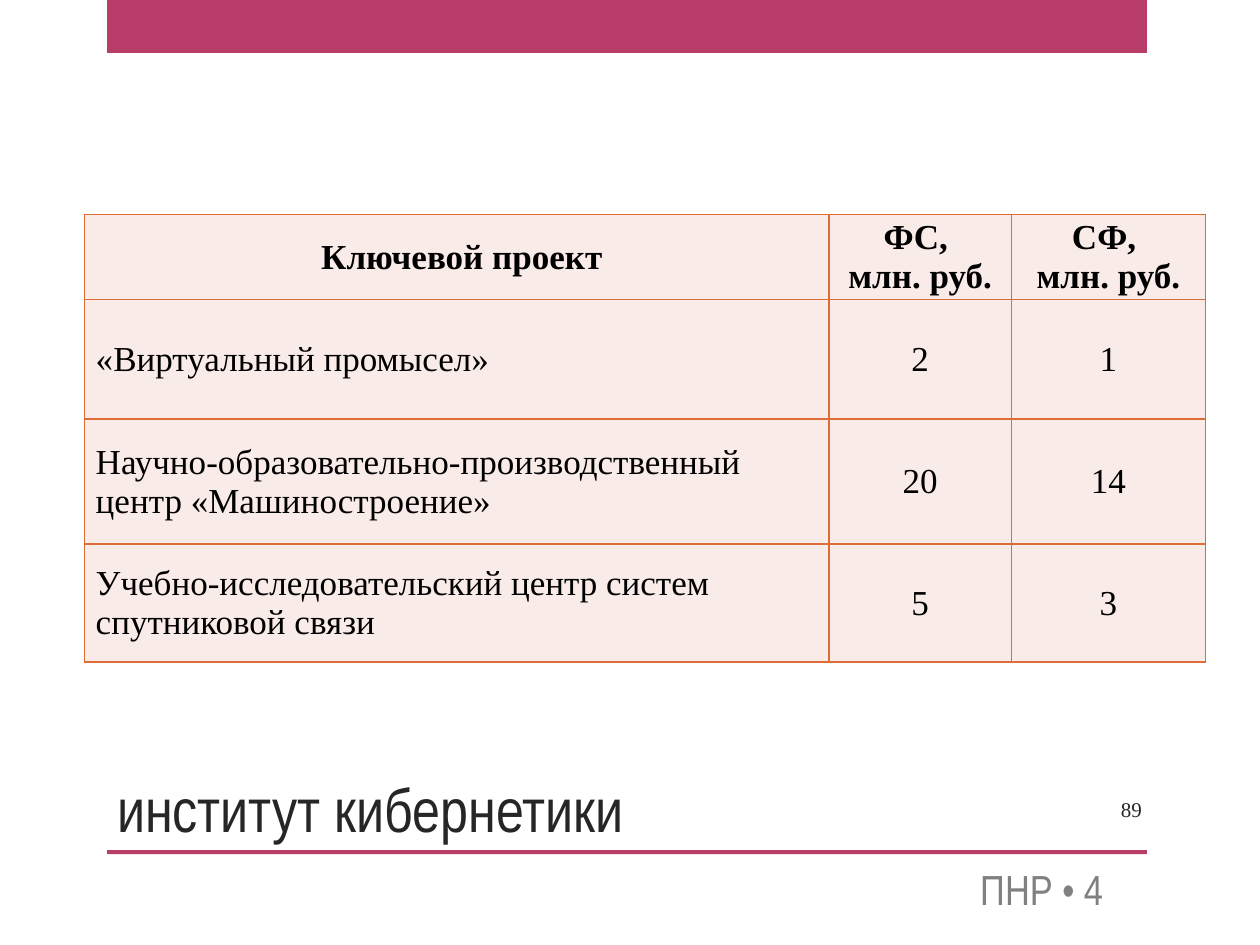
"""Build the slide of key projects of the cybernetics institute."""
from lxml import etree
from pptx import Presentation
from pptx.dml.color import RGBColor
from pptx.enum.shapes import MSO_SHAPE
from pptx.enum.text import MSO_ANCHOR, PP_ALIGN
from pptx.oxml.ns import qn
from pptx.util import Cm, Pt

RECT = MSO_SHAPE.RECTANGLE
MIDDLE, BOTTOM = MSO_ANCHOR.MIDDLE, MSO_ANCHOR.BOTTOM
LEFT, CENTER, RIGHT = PP_ALIGN.LEFT, PP_ALIGN.CENTER, PP_ALIGN.RIGHT

ROSE = RGBColor(0xB8, 0x3D, 0x68)
PALE = RGBColor(0xF9, 0xEB, 0xE8)
RUST = RGBColor(0xDE, 0x6C, 0x36)
DARK = RGBColor(0x26, 0x26, 0x26)
GRAY = RGBColor(0x80, 0x80, 0x80)
BLACK = RGBColor(0, 0, 0)

SERIF, NARROW = "Times New Roman", "Arial Narrow"
COLS = (15.01, 3.68, 3.91)
ROWS = (1.62, 2.41, 2.52, 2.38)
CELLS = (
    ("Ключевой проект", "ФС, \nмлн. руб.", "СФ, \nмлн. руб."),
    ("«Виртуальный промысел»", "2", "1"),
    ("Научно-образовательно-производственный центр «Машиностроение»", "20", "14"),
    ("Учебно-исследовательский центр систем спутниковой связи", "5", "3"),
)


def set_all(target, values):
    for name, value in values.items():
        setattr(target, name, value)


def write(frame, text, font, size, color, align=LEFT, bold=False):
    frame.text = text
    for para in frame.paragraphs:
        para.alignment = align
        set_all(para.font, {"name": font, "size": Pt(size), "bold": bold})
        para.font.color.rgb = color


def add_bar(slide, top, height):
    bar = slide.shapes.add_shape(RECT, Cm(2.16), Cm(top), Cm(20.96), Cm(height))
    bar.shadow.inherit = False
    bar.fill.solid()
    bar.fill.fore_color.rgb = ROSE
    bar.line.fill.background()


def add_label(slide, box, anchor, text, *style):
    frame = slide.shapes.add_textbox(*map(Cm, box)).text_frame
    set_all(frame, {"word_wrap": True, "vertical_anchor": anchor})
    write(frame, text, *style)


def add_edges(cell):
    props = cell._tc.get_or_add_tcPr()
    for spot, side in enumerate(("lnL", "lnR", "lnT", "lnB")):
        edge = etree.Element(qn(f"a:{side}"), w=str(Pt(1)))
        fill = etree.SubElement(edge, qn("a:solidFill"))
        etree.SubElement(fill, qn("a:srgbClr"), val=str(RUST))
        props.insert(spot, edge)


def fill_cell(cell, text, row, col):
    set_all(cell, {
        "vertical_anchor": MIDDLE,
        "margin_left": Cm(0.02 if col else 0.23),
        "margin_right": Cm(0.02),
        "margin_top": Cm(0.02),
        "margin_bottom": Cm(0),
    })
    cell.fill.solid()
    cell.fill.fore_color.rgb = PALE
    add_edges(cell)
    head = row == 0
    align = CENTER if head or col else LEFT
    write(cell.text_frame, text, SERIF, 20, BLACK, align, head)


def add_grid(slide):
    size = Cm(sum(COLS)), Cm(sum(ROWS))
    table = slide.shapes.add_table(
        len(ROWS), len(COLS), Cm(1.7), Cm(4.32), *size).table
    set_all(table, {"first_row": False, "horz_banding": False})
    for col, width in zip(table.columns, COLS):
        col.width = Cm(width)
    for row, height in zip(table.rows, ROWS):
        row.height = Cm(height)
    for row, line in enumerate(CELLS):
        for col, text in enumerate(line):
            fill_cell(table.cell(row, col), text, row, col)


def main():
    deck = Presentation()
    set_all(deck, {"slide_width": Cm(25.4), "slide_height": Cm(19.05)})
    slide = deck.slides.add_slide(deck.slide_layouts[6])
    add_bar(slide, 0, 1.07)
    add_bar(slide, 17.14, 0.08)
    add_label(slide, (21.16, 15.8, 2.11, 1.02), MIDDLE,
              "89", SERIF, 12, DARK, RIGHT)
    add_label(slide, (2.11, 14.94, 17.2, 2.21), BOTTOM,
              "институт кибернетики", NARROW, 35, DARK)
    add_label(slide, (19.51, 17.3, 3.61, 1.24), MIDDLE,
              "ПНР • 4", NARROW, 24, GRAY)
    add_grid(slide)
    deck.save("out.pptx")


if __name__ == "__main__":
    main()
